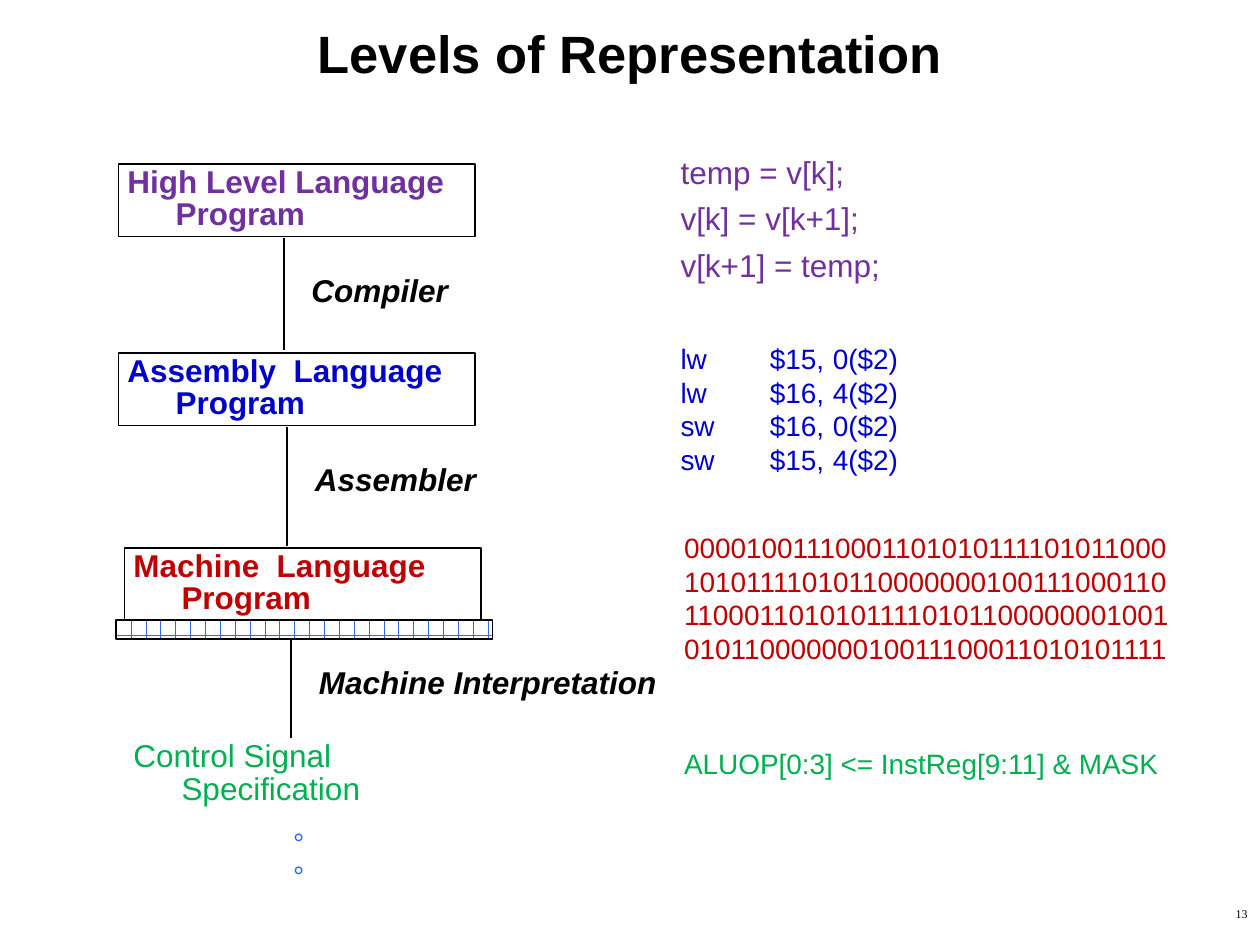
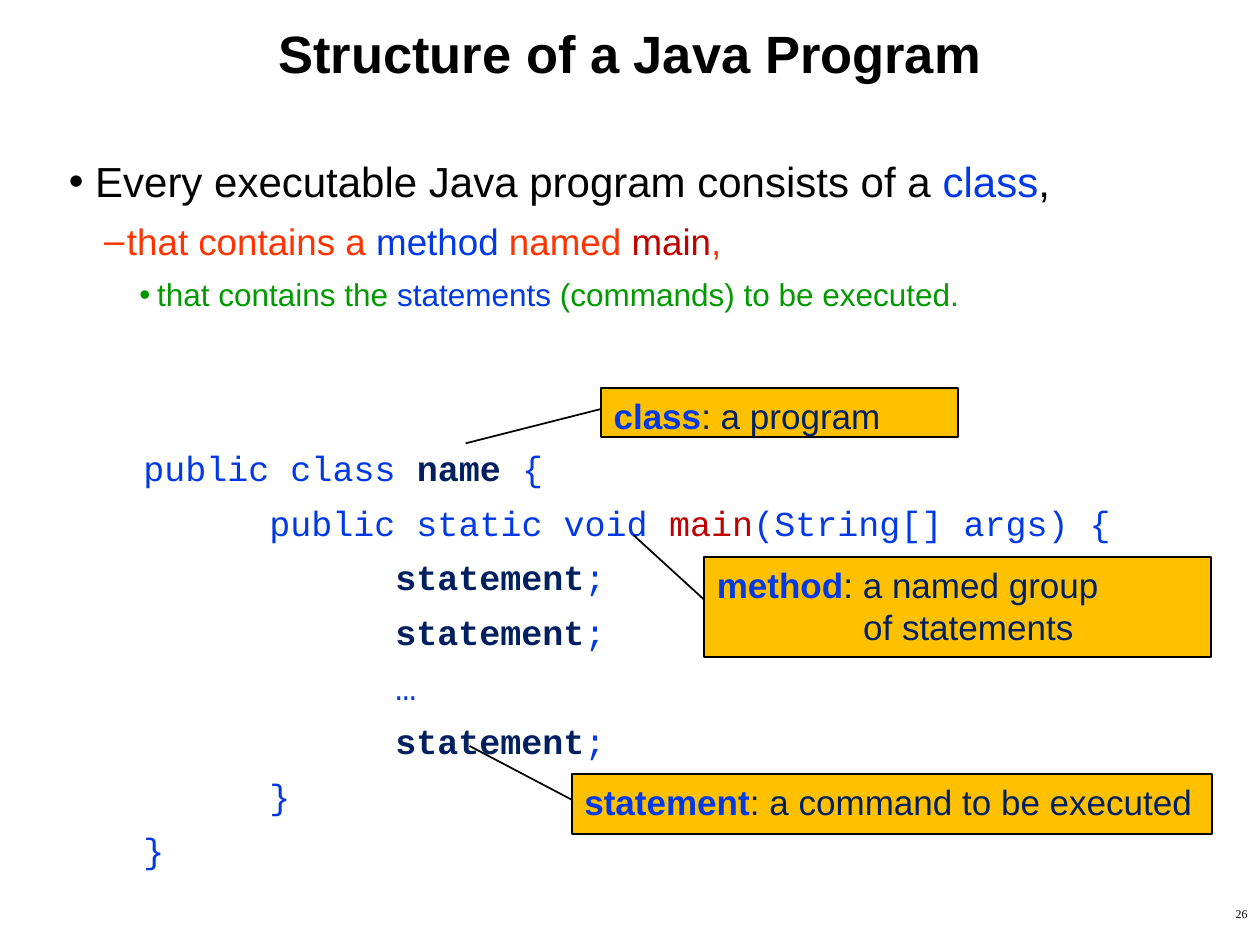
from lxml.etree import SubElement
from pptx import Presentation
from pptx.dml.color import RGBColor
from pptx.enum.dml import MSO_PATTERN
from pptx.enum.shapes import MSO_CONNECTOR, MSO_SHAPE
from pptx.enum.text import MSO_ANCHOR, PP_ALIGN
from pptx.oxml.ns import qn
from pptx.util import Cm, Pt

COLORS = {
    "black": "000000", "white": "FFFFFF", "high": "7030A0", "assembly": "0000CC",
    "machine": "C00000", "control": "00B050", "brick": "3366FF", "code": "0039E5",
    "navy": "002060", "orange": "FF3300", "green": "009900", "callout": "FFC000",
}
TIGHT, NORMAL = (0.18, 0.08), (0.25, 0.13)  # horizontal and vertical insets
HANG = 0.97


def rgb(name):
    return RGBColor.from_string(COLORS[name])


def set_frame(shape, insets=NORMAL, wrap=True, anchor=MSO_ANCHOR.TOP):
    frame = shape.text_frame
    frame.word_wrap = wrap
    frame.vertical_anchor = anchor
    frame.margin_left = frame.margin_right = Cm(insets[0])
    frame.margin_top = frame.margin_bottom = Cm(insets[1])
    return frame


def add_paragraph(frame, runs, size, font="Arial", italic=False, align=PP_ALIGN.LEFT,
                  spacing=1.0, before=0, after=0, left=0, hang=0, bullet=None, tab=None):
    """Append a paragraph; runs are (text, colour) or (text, colour, bold)."""
    first = frame.paragraphs[0]
    paragraph = frame.add_paragraph() if first.runs else first
    paragraph.alignment = align
    paragraph.line_spacing = spacing
    paragraph.space_before, paragraph.space_after = Pt(before), Pt(after)
    props = paragraph._p.get_or_add_pPr()
    props.set("marL", str(Cm(left)))
    props.set("indent", str(Cm(-hang)))
    if bullet:
        SubElement(props, qn("a:buFont"), typeface="Arial")
        SubElement(props, qn("a:buChar"), char=bullet)
    else:
        SubElement(props, qn("a:buNone"))
    if tab:
        tabs = SubElement(props, qn("a:tabLst"))
        SubElement(tabs, qn("a:tab"), pos=str(Cm(tab)), algn="l")
    for text, color, *bold in runs:
        run = paragraph.add_run()
        run.text = text
        run.font.name, run.font.size = font, Pt(size)
        run.font.bold, run.font.italic = bool(bold and bold[0]), italic
        run.font.color.rgb = rgb(color)


def add_text(slide, box, insets=NORMAL, wrap=True, anchor=MSO_ANCHOR.TOP):
    return set_frame(slide.shapes.add_textbox(*map(Cm, box)), insets, wrap, anchor)


def add_lines(slide, box, lines, color, size, insets=NORMAL, wrap=True, gap=0, **style):
    frame = add_text(slide, box, insets, wrap)
    for i, line in enumerate(lines):
        add_paragraph(frame, [(line, color)], size, before=gap if i else 0, **style)


def add_outlined(slide, kind, box):
    shape = slide.shapes.add_shape(kind, *map(Cm, box))
    shape.shadow.inherit = False
    shape.fill.background()
    shape.line.color.rgb = rgb("black")
    shape.line.width = Pt(1)
    return shape


def add_level(slide, box, text, color):
    frame = set_frame(add_outlined(slide, MSO_SHAPE.RECTANGLE, box), TIGHT)
    add_paragraph(frame, [(text, color, True)], 18, spacing=0.85, left=HANG, hang=HANG)


def add_step(slide, x, top, bottom, caption, caption_top, width):
    """Vertical line between two levels, with its caption on the right."""
    line = slide.shapes.add_connector(MSO_CONNECTOR.STRAIGHT, Cm(x), Cm(top), Cm(x), Cm(bottom))
    line.line.color.rgb = rgb("black")
    line.line.width = Pt(1)
    SubElement(line._element.spPr, qn("a:effectLst"))
    frame = add_text(slide, (x + 0.38, caption_top, width, 0.79), TIGHT)
    add_paragraph(frame, [(caption, "black", True)], 18, italic=True, spacing=0.85)


def add_callout(slide, box, pointer, term, meaning, continuation=None):
    shape = add_outlined(slide, MSO_SHAPE.LINE_CALLOUT_1, box)
    shape.fill.solid()
    shape.fill.fore_color.rgb = rgb("callout")
    for i, value in enumerate((0.43, 0, *pointer)):
        shape.adjustments[i] = value
    frame = set_frame(shape)
    add_paragraph(frame, [(term, "code", True), (": " + meaning, "navy")], 20, before=1)
    if continuation:
        add_paragraph(frame, [(continuation, "navy")], 20, left=2.95)


def new_slide(deck, title, number):
    slide = deck.slides.add_slide(deck.slide_layouts[6])
    slide.background.fill.solid()
    slide.background.fill.fore_color.rgb = rgb("white")
    heading = add_text(slide, (0, 0, 25.4, 2.13), anchor=MSO_ANCHOR.MIDDLE)
    add_paragraph(heading, [(title, "black", True)], 30, align=PP_ALIGN.CENTER)
    footer = add_text(slide, (20.12, 18.14, 5.28, 0.91))
    add_paragraph(footer, [(number, "black")], 6.8, "Times New Roman", align=PP_ALIGN.RIGHT)
    return slide


def build_levels(deck):
    slide = new_slide(deck, "Levels of Representation", "13")

    # Language levels and the steps between them
    for left, top, text, color in (
        (2.39, 3.3, "High Level Language Program", "high"),
        (2.39, 7.11, "Assembly  Language Program", "assembly"),
        (2.51, 11.05, "Machine  Language Program", "machine"),
    ):
        add_level(slide, (left, top, 7.19, 1.47), text, color)
    add_lines(slide, (2.51, 14.86, 7.19, 1.52), ["Control Signal Specification"], "control", 18,
              TIGHT, spacing=0.88, left=HANG, hang=HANG)
    for step in (
        (5.72, 4.8, 7.06, "Compiler", 5.51, 3.66),
        (5.79, 8.61, 11, "Assembler", 9.32, 4.01),
        (5.87, 12.5, 14.88, "Machine Interpretation", 13.41, 7.54),
    ):
        add_step(slide, *step)
    add_lines(slide, (5.66, 16.51, 0.74, 1.63), ["°", "°"], "brick", 16, wrap=False)

    # Hardware boundary
    boundary = add_outlined(slide, MSO_SHAPE.RECTANGLE, (2.34, 12.5, 7.59, 0.38))
    boundary.fill.patterned()
    boundary.fill.pattern = MSO_PATTERN.HORIZONTAL_BRICK
    boundary.fill.fore_color.rgb = rgb("brick")
    boundary.fill.back_color.rgb = rgb("white")

    # The same code at each level
    add_lines(slide, (13.54, 3.1, 8.61, 2.79), ["temp = v[k];", "v[k] = v[k+1];", "v[k+1] = temp;"],
              "high", 18, TIGHT, gap=7.6, spacing=0.88)
    add_lines(slide, (13.54, 6.81, 8.41, 2.87),
              ["lw\t$15,\t0($2)", "lw\t$16,\t4($2)", "sw\t$16,\t0($2)", "sw\t$15,\t4($2)"],
              "assembly", 16, TIGHT, left=0.53, hang=0.53, tab=2.97)
    add_lines(slide, (13.54, 10.57, 10.29, 3),
              ["00001001110001101010111101011000", "10101111010110000000100111000110",
               "11000110101011110101100000001001", "01011000000010011100011010101111"],
              "machine", 16, wrap=False)
    add_lines(slide, (13.54, 14.91, 10.13, 0.94), ["ALUOP[0:3] <= InstReg[9:11] & MASK"],
              "control", 16, wrap=False)


def build_java(deck):
    slide = new_slide(deck, "Structure of a Java Program", "26")

    # Nested statements
    outline = add_text(slide, (1.14, 3.12, 23.24, 4))
    for size, left, hang, bullet, runs in (
        (24, 0.53, 0.53, "•", [("Every executable Java program consists of a ", "black"),
                               ("class", "code"), (",", "black")]),
        (21, 1.17, 0.46, "–", [("that contains a ", "orange"), ("method", "code"),
                               (" named ", "orange"), ("main", "machine"), (",", "orange")]),
        (18, 1.78, 0.36, "•", [("that contains the ", "green"), ("statements", "code"),
                               (" (commands) to be executed.", "green")]),
    ):
        add_paragraph(outline, runs, size, spacing=0.9, before=size * 0.18, after=6,
                      left=left, hang=hang, bullet=bullet)

    # Program skeleton, one tab stop deeper per level
    skeleton = add_text(slide, (1.14, 8.97, 23.24, 8.9))
    statement = (2, [("statement", "navy", True), (";", "code")])
    for depth, runs in (
        (0, [("public class ", "code"), ("name", "navy", True), (" {", "code")]),
        (1, [("public static void ", "code"), ("main", "machine"), ("(String[] args) {", "code")]),
        statement,
        statement,
        (2, [("…", "code")]),
        statement,
        (1, [("}", "code")]),
        (0, [("}", "code")]),
    ):
        add_paragraph(skeleton, runs, 20, "Courier New", spacing=0.9, before=3.6, after=6,
                      left=1.5 + 2.54 * depth)

    # Explanations
    add_callout(slide, (12.12, 7.82, 7.19, 0.99), (1.13, -0.38), "class", "a program")
    add_callout(slide, (14.2, 11.23, 10.21, 2.01), (-0.22, -0.14), "method", "a named group",
                "of statements")
    add_callout(slide, (11.53, 15.6, 12.9, 1.22), (-0.46, -0.16), "statement",
                "a command to be executed")


def main():
    deck = Presentation()
    deck.slide_width, deck.slide_height = Cm(25.4), Cm(19.05)
    build_levels(deck)
    build_java(deck)
    deck.save("out.pptx")


if __name__ == "__main__":
    main()
